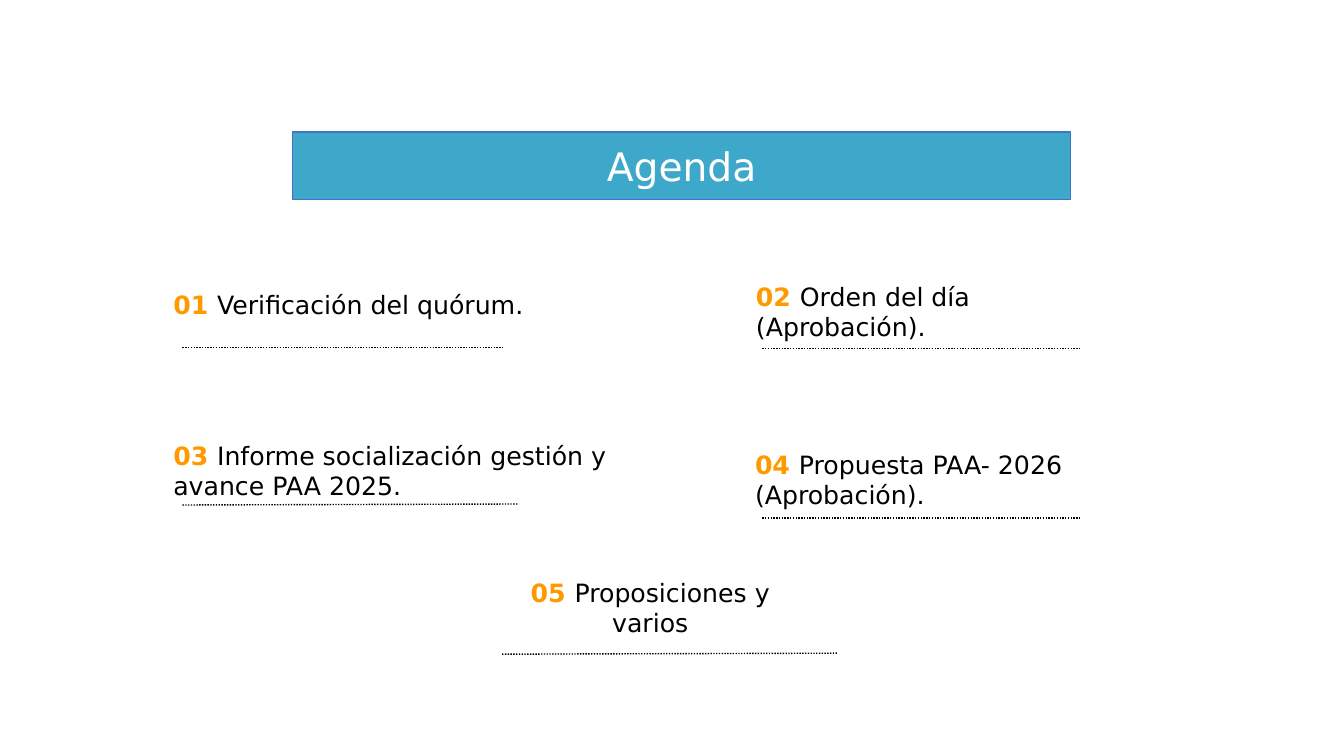
import pptx
import pptx.util
import pptx.dml.color
import pptx.enum.dml
import pptx.enum.shapes
import pptx.enum.text
import pptx.oxml.ns
import lxml.etree

Inches = pptx.util.Inches
ALIGN = pptx.enum.text.PP_ALIGN
COLORS = {"banner": "3EA8CB", "border": "4472C4", "number": "FF9900",
          "text": "000000", "title": "FFFFFF"}


class AgendaSlide:
    """Holds the text style and the current slide."""

    def __init__(self, prs, font="DejaVu Sans"):
        self.font = font
        self.s = prs.slides.add_slide(prs.slide_layouts[6])

    def color(self, name):
        return pptx.dml.color.RGBColor.from_string(COLORS[name])

    def run(self, p, text, color, **formats):
        r = p.add_run()
        r.text = text
        for name, value in {"name": self.font, **formats}.items():
            setattr(r.font, name, value)
        r.font.color.rgb = self.color(color)

    def banner(self, text, *box):
        sp = self.s.shapes.add_shape(
            pptx.enum.shapes.MSO_SHAPE.RECTANGLE, *map(Inches, box))
        sp.shadow.inherit = False
        sp.fill.solid()
        sp.fill.fore_color.rgb = self.color("banner")
        sp.line.color.rgb = self.color("border")
        sp.line.width = pptx.util.Pt(1)
        tf = sp.text_frame
        tf.vertical_anchor = pptx.enum.text.MSO_ANCHOR.MIDDLE
        p = tf.paragraphs[0]
        p.alignment = ALIGN.CENTER
        self.run(p, text, "title", size=pptx.util.Pt(28))

    def item(self, number, text, box, align):
        tf = self.s.shapes.add_textbox(*map(Inches, box)).text_frame
        formats = {"word_wrap": True,
                   "auto_size": pptx.enum.text.MSO_AUTO_SIZE.SHAPE_TO_FIT_TEXT}
        for name, value in formats.items():
            setattr(tf, name, value)
        p = tf.paragraphs[0]
        p.alignment = align
        size = pptx.util.Pt(18)
        self.run(p, f"{number:02d} ", "number", size=size, bold=True)
        self.run(p, text, "text", size=size, bold=False)

    def dotted_line(self, *ends):
        line = self.s.shapes.add_connector(
            pptx.enum.shapes.MSO_CONNECTOR.STRAIGHT, *map(Inches, ends))
        formats = {"width": pptx.util.Pt(1),
                   "dash_style": pptx.enum.dml.MSO_LINE.ROUND_DOT}
        line.line.color.rgb = self.color("text")
        for name, value in formats.items():
            setattr(line.line, name, value)
        lxml.etree.SubElement(line._element.spPr,
                              pptx.oxml.ns.qn("a:effectLst"))


# Agenda items: text, text box, line ends, alignment
ITEMS = [
    ("Verificación del quórum.",
     (1.62, 2.82, 3.75, 0.71), (1.81, 3.45, 4.98, 3.45), ALIGN.LEFT),
    ("Orden del día (Aprobación).",
     (7.4, 2.74, 3.96, 1.01), (7.56, 3.46, 10.72, 3.46), ALIGN.LEFT),
    ("Informe socialización gestión y avance PAA 2025.",
     (1.62, 4.32, 5.31, 1.01), (1.81, 5.01, 5.14, 5), ALIGN.LEFT),
    ("Propuesta PAA- 2026 (Aprobación).",
     (7.39, 4.41, 3.5, 0.71), (7.56, 5.14, 10.72, 5.14), ALIGN.LEFT),
    ("Proposiciones y varios",
     (4.75, 5.68, 3.4, 0.71), (4.98, 6.49, 8.3, 6.48), ALIGN.CENTER),
]


def main():
    prs = pptx.Presentation()
    prs.slide_width, prs.slide_height = Inches(13.33), Inches(7.5)
    agenda = AgendaSlide(prs)

    # Title banner
    agenda.banner("Agenda", 2.9, 1.31, 7.72, 0.67)

    # Numbered items with dotted underlines
    for number, (text, box, ends, align) in enumerate(ITEMS, 1):
        agenda.item(number, text, box, align)
        agenda.dotted_line(*ends)

    prs.save("out.pptx")


if __name__ == "__main__":
    main()
